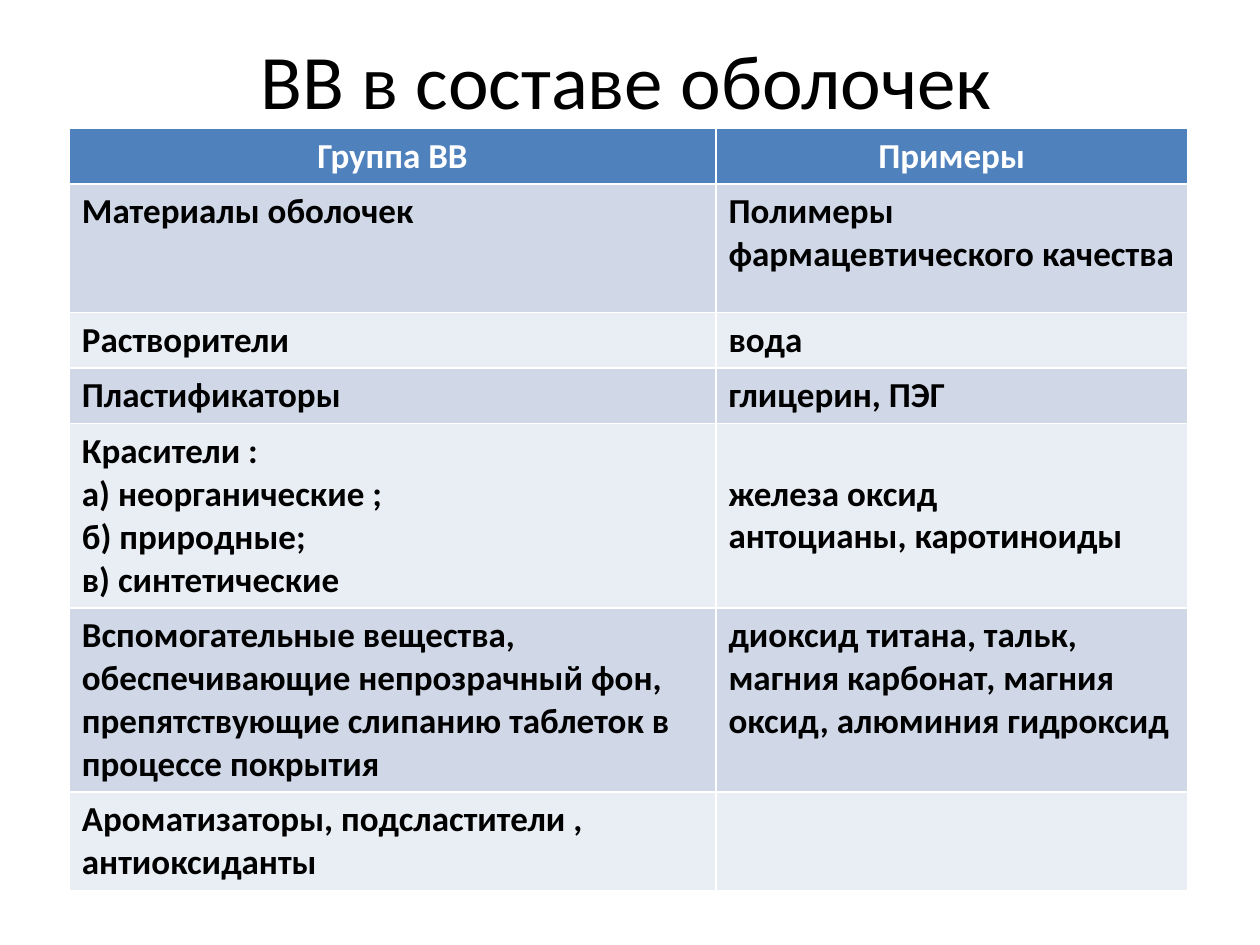
from pptx import Presentation
from pptx.dml.color import RGBColor
from pptx.enum.text import MSO_ANCHOR as Anchor, PP_ALIGN as Align
from pptx.util import Pt

FONT = "Calibri"
BLACK, WHITE = "000000", "FFFFFF"
HEAD, BANDS = "4F81BD", ("E9EDF4", "D0D8E8")
LINE = 24.4  # height of one 20 pt line

COLS = (369.5, 269.5)
ROWS = [
    (31.5, "Группа ВВ", "Примеры"),
    (73.5, "Материалы оболочек", "Полимеры фармацевтического качества"),
    (31.5, "Растворители", "вода"),
    (31.5, "Пластификаторы", "глицерин, ПЭГ"),
    (105, "Красители :\nа) неорганические ;\nб) природные;\nв) синтетические",
     "железа оксид\nантоцианы, каротиноиды"),
    (105, "Вспомогательные вещества, обеспечивающие непрозрачный фон, "
     "препятствующие слипанию таблеток в процессе покрытия",
     "диоксид титана, тальк, магния карбонат, магния оксид, "
     "алюминия гидроксид"),
    (56, "Ароматизаторы, подсластители , антиоксиданты", ""),
]
DYES = 4  # row whose examples start level with its second line


def rgb(color):
    return RGBColor.from_string(color)


def style(frame, size, color, bold, align):
    for para in frame.paragraphs:
        para.alignment = align
        for font in [para.font] + [run.font for run in para.runs]:
            font.name, font.size, font.bold = FONT, Pt(size), bold
            font.color.rgb = rgb(color)


def add_title(slide, text, left, top, width, height):
    title = slide.shapes.title
    title.left, title.top = Pt(left), Pt(top)
    title.width, title.height = Pt(width), Pt(height)
    frame = title.text_frame
    frame.text = text
    frame.vertical_anchor = Anchor.MIDDLE
    style(frame, 44, BLACK, False, Align.CENTER)


def add_grid(slide, left, top):
    high = sum(row[0] for row in ROWS)
    table = slide.shapes.add_table(
        len(ROWS), len(COLS), Pt(left), Pt(top), Pt(sum(COLS)), Pt(high)).table
    for col, width in zip(table.columns, COLS):
        col.width = Pt(width)

    # The built-in table style draws the white rules
    for r, (height, *texts) in enumerate(ROWS):
        table.rows[r].height = Pt(height)
        for c, text in enumerate(texts):
            cell = table.cell(r, c)
            cell.text_frame.text = text
            cell.fill.solid()
            cell.fill.fore_color.rgb = rgb(BANDS[r % 2] if r else HEAD)
            style(cell.text_frame, 20, BLACK if r else WHITE, True,
                  Align.LEFT if r else Align.CENTER)

    # Line the dye examples up with their kinds
    table.cell(DYES, 1).margin_top = Pt(3.6 + LINE)


def main():
    deck = Presentation()
    deck.slide_width, deck.slide_height = Pt(720), Pt(540)
    slide = deck.slides.add_slide(deck.slide_layouts[5])
    add_title(slide, "ВВ в составе оболочек", 34, 0, 648, 90)
    add_grid(slide, 39.6, 73.5)
    deck.save("out.pptx")


if __name__ == "__main__":
    main()
